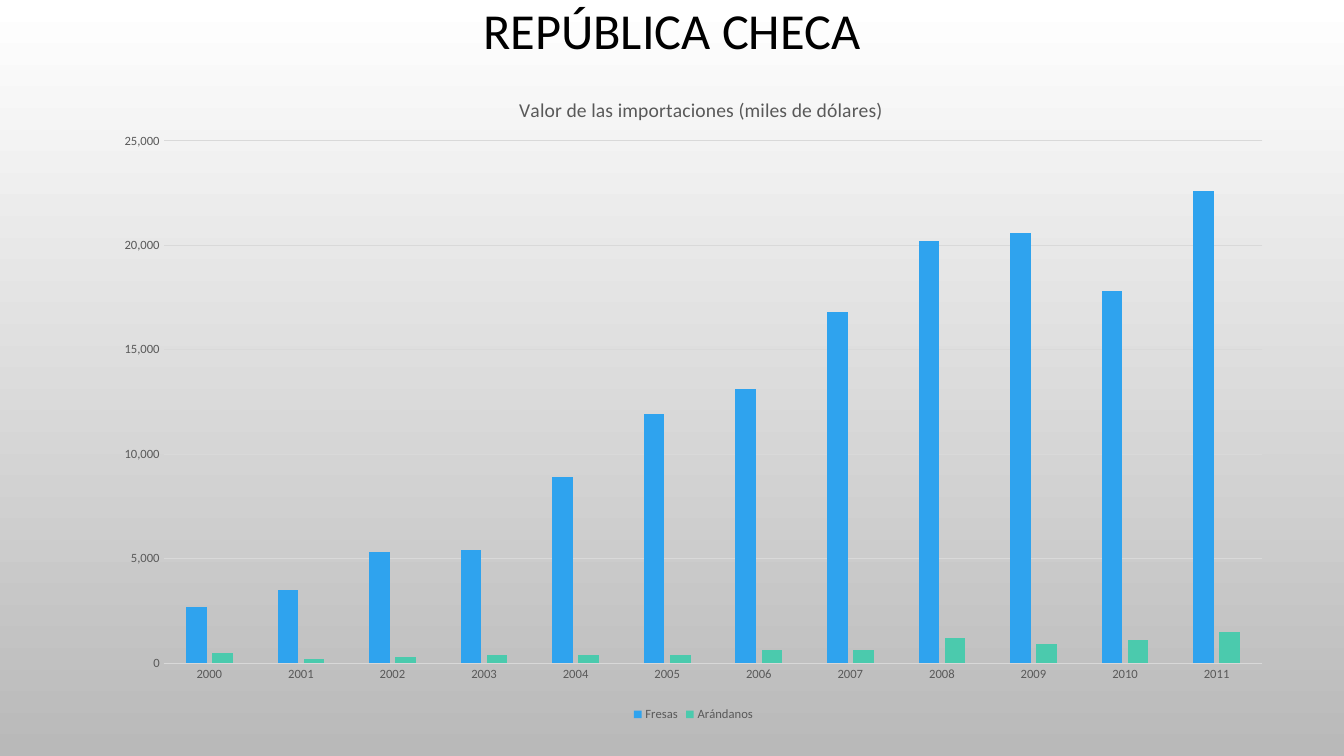
from lxml import etree
from pptx import Presentation
from pptx.chart.data import CategoryChartData
from pptx.dml.color import RGBColor
from pptx.enum.chart import XL_CHART_TYPE as ChartType, XL_LEGEND_POSITION as LegendPosition
from pptx.enum.chart import XL_TICK_MARK as TickMark
from pptx.enum.text import MSO_ANCHOR as Anchor, PP_ALIGN as Align
from pptx.oxml import parse_xml
from pptx.oxml.ns import nsdecls, qn
from pptx.util import Pt

FONT = "Calibri"
GRAY = "595959"
LINE = "D9D9D9"
YEARS = [str(year) for year in range(2000, 2012)]
IMPORTS = {
    "Fresas": ("2FA3EE", [2700, 3500, 5300, 5400, 8900, 11900,
                          13100, 16800, 20200, 20600, 17800, 22600]),
    "Arándanos": ("4BCAAD", [500, 200, 300, 400, 400, 400,
                             600, 600, 1200, 900, 1100, 1500]),
}


def color(hex_string):
    return RGBColor.from_string(hex_string)


def style_font(font, size, hex_string):
    font.name = FONT
    font.size = Pt(size)
    font.bold = False
    font.color.rgb = color(hex_string)


def style_line(line, hex_string):
    line.width = Pt(0.75)
    line.color.rgb = color(hex_string)


def set_layout(parent, before, **fractions):
    """Place a chart part at fractions of the chart's width and height."""
    for old in parent.findall(qn("c:layout")):
        parent.remove(old)
    layout = parse_xml(f"<c:layout {nsdecls('c')}><c:manualLayout/></c:layout>")
    values = {"xMode": "edge", "yMode": "edge", **fractions}
    if "w" in fractions:
        values = {"layoutTarget": "inner", **values}
    for name, value in values.items():
        etree.SubElement(layout[0], qn(f"c:{name}")).set("val", str(value))
    parent.insert(before, layout)


def paint_background(slide):
    fill = slide.background.fill
    fill.gradient()
    fill.gradient_angle = 270
    for stop, hex_string, position in zip(fill.gradient_stops, ("FFFFFF", "B9B9B9"), (0, 1)):
        stop.color.rgb = color(hex_string)
        stop.position = position


def add_heading(slide, text, left, top, width, height):
    frame = slide.shapes.add_textbox(Pt(left), Pt(top), Pt(width), Pt(height)).text_frame
    frame.word_wrap = True
    frame.vertical_anchor = Anchor.MIDDLE
    paragraph = frame.paragraphs[0]
    paragraph.text = text
    paragraph.alignment = Align.CENTER
    paragraph.line_spacing = 0.9
    style_font(paragraph.font, 36, "000000")


def style_axes(chart):
    for axis in (chart.category_axis, chart.value_axis):
        axis.major_tick_mark = axis.minor_tick_mark = TickMark.NONE
        style_font(axis.tick_labels.font, 9, GRAY)
    style_line(chart.category_axis.format.line, LINE)
    values = chart.value_axis
    values.minimum_scale, values.maximum_scale, values.major_unit = 0, 25000, 5000
    values.tick_labels.number_format = "#,##0"
    values.tick_labels.number_format_is_linked = False
    values.format.line.fill.background()
    style_line(values.major_gridlines.format.line, LINE)


def add_imports_chart(slide, title, left, top, width, height):
    data = CategoryChartData(number_format="#,##0")
    data.categories = YEARS
    for name, (_, values) in IMPORTS.items():
        data.add_series(name, values)
    chart = slide.shapes.add_chart(ChartType.COLUMN_CLUSTERED, Pt(left), Pt(top),
                                   Pt(width), Pt(height), data).chart
    style_font(chart.font, 10, "000000")

    chart.has_title = True
    chart.chart_title.include_in_layout = False
    paragraph = chart.chart_title.text_frame.paragraphs[0]
    paragraph.text = title
    style_font(paragraph.font, 14, GRAY)
    set_layout(chart.chart_title._element, 1, x=0.35, y=0.04)

    plot = chart.plots[0]
    plot.gap_width = 219
    plot.overlap = -27
    plot.vary_by_categories = False
    for series in plot.series:
        series.format.fill.solid()
        series.format.fill.fore_color.rgb = color(IMPORTS[series.name][0])
    style_axes(chart)

    chart.has_legend = True
    chart.legend.position = LegendPosition.BOTTOM
    chart.legend.include_in_layout = False
    style_font(chart.legend.font, 9, GRAY)
    plot_area = chart._chartSpace.chart.plotArea
    set_layout(plot_area, 0, x=0.053, y=0.113, w=0.927, h=0.792)


def main():
    presentation = Presentation()
    presentation.slide_width, presentation.slide_height = Pt(960), Pt(540)
    slide = presentation.slides.add_slide(presentation.slide_layouts[6])
    paint_background(slide)
    add_heading(slide, "REPÚBLICA CHECA", 72, 0, 816, 47.5)
    add_imports_chart(slide, "Valor de las importaciones (miles de dólares)",
                      72, 47.5, 846.7, 470.9)
    presentation.save("out.pptx")


if __name__ == "__main__":
    main()
